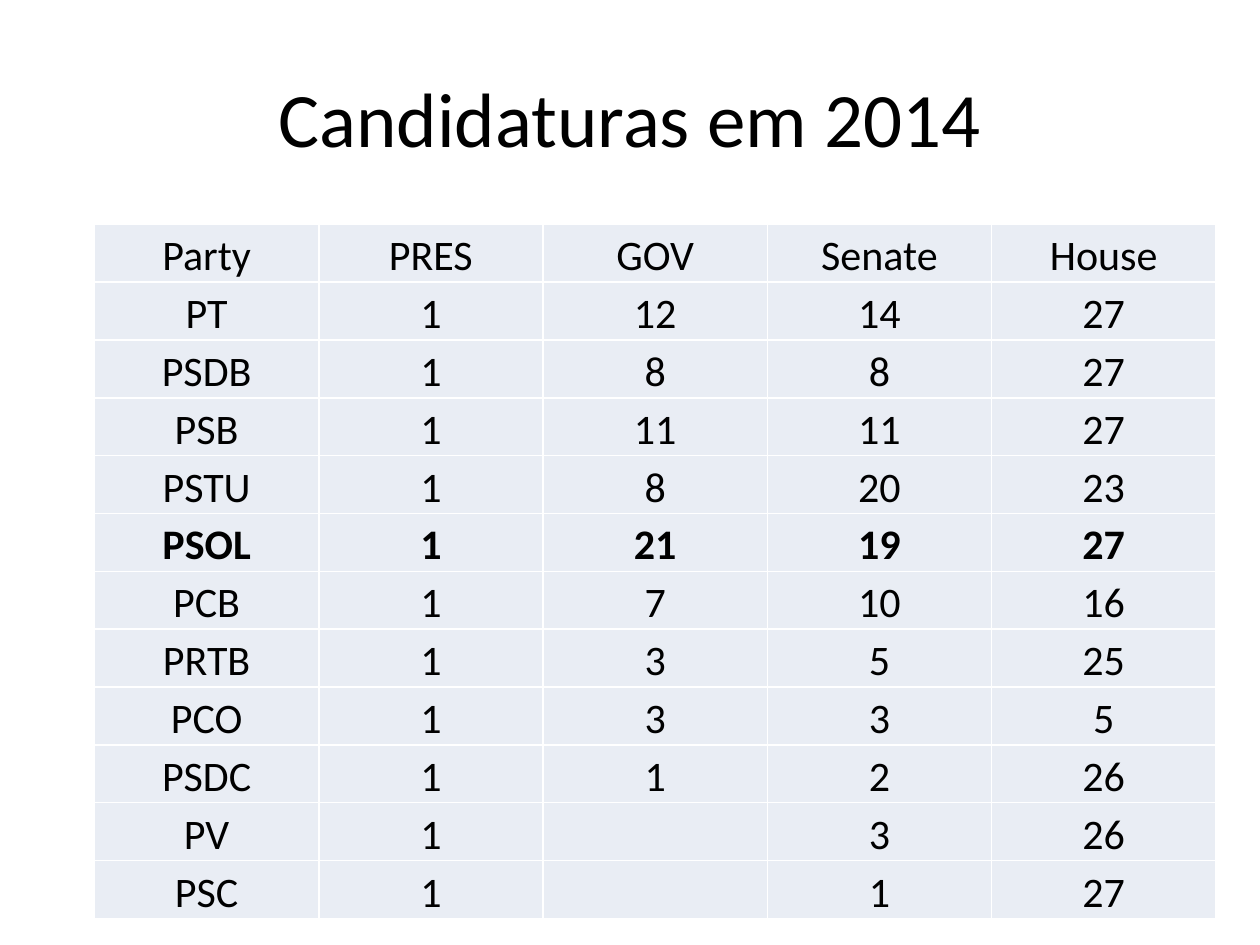
"""Build a slide with a table of 2014 candidacies by party and office."""
import pptx
import pptx.dml.color
import pptx.enum.text
import pptx.util

Inches = pptx.util.Inches
BLACK = pptx.dml.color.RGBColor(0x00, 0x00, 0x00)
WHITE = pptx.dml.color.RGBColor(0xFF, 0xFF, 0xFF)
CELL_FILL = pptx.dml.color.RGBColor(0xE9, 0xED, 0xF4)
FONT = "Calibri"
HIGHLIGHTED_PARTY = "PSOL"
ROWS = [
    ("Party", "PRES", "GOV", "Senate", "House"),
    ("PT", "1", "12", "14", "27"),
    ("PSDB", "1", "8", "8", "27"),
    ("PSB", "1", "11", "11", "27"),
    ("PSTU", "1", "8", "20", "23"),
    ("PSOL", "1", "21", "19", "27"),
    ("PCB", "1", "7", "10", "16"),
    ("PRTB", "1", "3", "5", "25"),
    ("PCO", "1", "3", "3", "5"),
    ("PSDC", "1", "1", "2", "26"),
    ("PV", "1", "", "3", "26"),
    ("PSC", "1", "", "1", "27"),
]


def add_run(para, text, size, bold=False):
    para.alignment = pptx.enum.text.PP_ALIGN.CENTER
    span = para.add_run()
    span.text = text
    span.font.name = FONT
    span.font.size = pptx.util.Pt(size)
    span.font.bold = bold
    span.font.color.rgb = BLACK


deck = pptx.Presentation()
deck.slide_width = Inches(10)
deck.slide_height = Inches(7.5)
page = deck.slides.add_slide(deck.slide_layouts[5])
page.background.fill.solid()
page.background.fill.fore_color.rgb = WHITE

title = page.shapes.title
title.left, title.top = Inches(0.5), Inches(0.3)
title.width, title.height = Inches(9), Inches(1.25)
title.text_frame.vertical_anchor = pptx.enum.text.MSO_ANCHOR.MIDDLE
add_run(title.text_frame.paragraphs[0], "Candidaturas em 2014", 44)

table = page.shapes.add_table(
    len(ROWS), len(ROWS[0]), Inches(0.75), Inches(1.78), Inches(8.9), Inches(5.51)
).table
table.first_row = False
table.horz_banding = False

for row_index, values in enumerate(ROWS):
    for column_index, value in enumerate(values):
        cell = table.cell(row_index, column_index)
        cell.fill.solid()
        cell.fill.fore_color.rgb = CELL_FILL
        cell.vertical_anchor = pptx.enum.text.MSO_ANCHOR.BOTTOM
        cell.margin_left = cell.margin_top = cell.margin_right = Inches(0.01)
        cell.margin_bottom = 0
        if value:
            para = cell.text_frame.paragraphs[0]
            add_run(para, value, 24, bold=values[0] == HIGHLIGHTED_PARTY)

deck.save("out.pptx")
